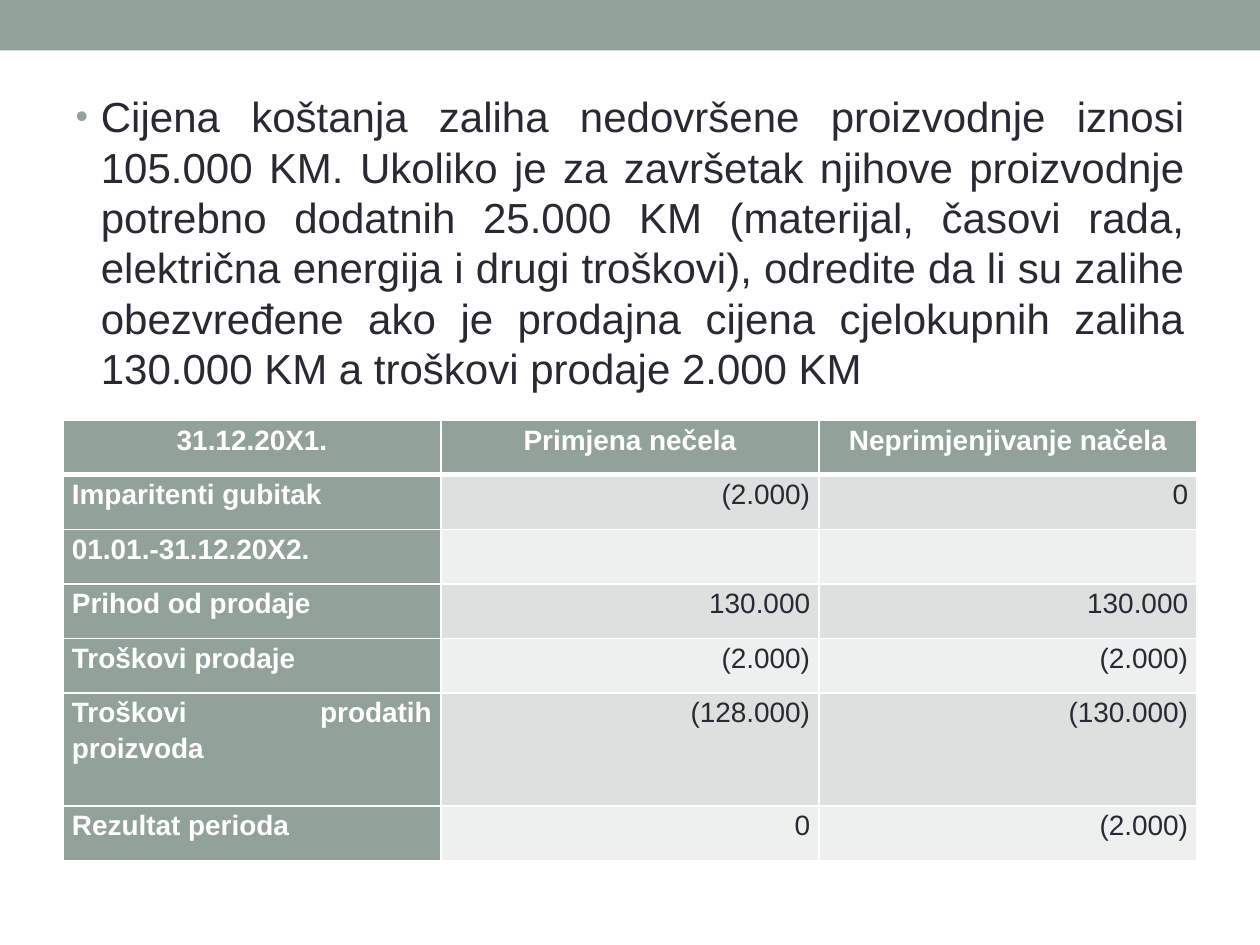
import pptx
import pptx.dml.color
import pptx.enum.shapes
import pptx.enum.text
import pptx.oxml
import pptx.util
from pptx.util import Cm, Pt

ALIGN = pptx.enum.text.PP_ALIGN
FONT = "Arial"
SAGE, INK, WHITE = "93A299", "292934", "FFFFFF"
BANDS = ("DCE0DE", "EEF0EF")

TASK = (
    "Cijena koštanja zaliha nedovršene proizvodnje iznosi 105.000 KM. "
    "Ukoliko je za završetak njihove proizvodnje potrebno dodatnih 25.000 KM "
    "(materijal, časovi rada, električna energija i drugi troškovi), odredite "
    "da li su zalihe obezvređene ako je prodajna cijena cjelokupnih zaliha "
    "130.000 KM a troškovi prodaje 2.000 KM"
)
ROWS = [
    ("31.12.20X1.", "Primjena nečela", "Neprimjenjivanje načela"),
    ("Imparitenti gubitak", "(2.000)", "0"),
    ("01.01.-31.12.20X2.", "", ""),
    ("Prihod od prodaje", "130.000", "130.000"),
    ("Troškovi prodaje", "(2.000)", "(2.000)"),
    ("Troškovi prodatih proizvoda", "(128.000)", "(130.000)"),
    ("Rezultat perioda", "0", "(2.000)"),
]
TALL_ROW = 5


def color(value):
    return pptx.dml.color.RGBColor.from_string(value)


def xml(tag, attributes="", content=""):
    namespace = "http://schemas.openxmlformats.org/drawingml/2006/main"
    return pptx.oxml.parse_xml(
        f'<a:{tag} xmlns:a="{namespace}" {attributes}>{content}</a:{tag}>')


def format_runs(paragraph, size, value, bold=False):
    for run in paragraph.runs:
        run.font.name = FONT
        run.font.size = Pt(size)
        run.font.bold = bold
        run.font.color.rgb = color(value)


def add_band(slide, width):
    band = slide.shapes.add_shape(
        pptx.enum.shapes.MSO_SHAPE.RECTANGLE, 0, 0, width, Cm(1.02))
    band.shadow.inherit = False
    band.fill.solid()
    band.fill.fore_color.rgb = color(SAGE)
    band.line.fill.background()


def fill_body(body):
    body.left, body.top, body.width, body.height = (
        Cm(1.27), Cm(1.7), Cm(22.86), Cm(6.55))
    body.text_frame.text = TASK
    paragraph = body.text_frame.paragraphs[0]
    paragraph.alignment = ALIGN.JUSTIFY
    format_runs(paragraph, 24, INK)
    # Hanging bullet
    properties = paragraph._p.get_or_add_pPr()
    properties.set("marL", str(Cm(0.51)))
    properties.set("indent", str(-Cm(0.51)))
    properties.append(xml("spcBef", content='<a:spcPct val="20000"/>'))
    properties.append(xml("buClr", content=f'<a:srgbClr val="{SAGE}"/>'))
    properties.append(xml("buSzPct", 'val="85000"'))
    properties.append(xml("buFont", f'typeface="{FONT}"'))
    properties.append(xml("buChar", 'char="•"'))


def set_borders(cell, is_header, below_header):
    properties = cell._tc.get_or_add_tcPr()
    widths = {"lnL": 1, "lnR": 1, "lnT": 3 if below_header else 1,
              "lnB": 3 if is_header else 1}
    # Borders come before the fill in the cell properties
    for index, (side, width) in enumerate(widths.items()):
        line = xml(side, f'w="{Pt(width)}"',
                   f'<a:solidFill><a:srgbClr val="{WHITE}"/></a:solidFill>')
        properties.insert(index, line)


def fill_cell(cell, text, row, column):
    is_header = row == 0
    is_label = is_header or column == 0
    cell.fill.solid()
    cell.fill.fore_color.rgb = color(SAGE if is_label else BANDS[(row - 1) % 2])
    set_borders(cell, is_header, row == 1)
    cell.margin_left = cell.margin_right = Cm(0.18)
    cell.margin_top = cell.margin_bottom = 0
    if not text:
        return
    cell.text_frame.text = text
    paragraph = cell.text_frame.paragraphs[0]
    paragraph.line_spacing = 1.15
    if is_header:
        paragraph.alignment = ALIGN.CENTER
    else:
        paragraph.alignment = ALIGN.JUSTIFY if is_label else ALIGN.RIGHT
    format_runs(paragraph, 16, WHITE if is_label else INK, is_label)


def add_results_table(slide):
    table = slide.shapes.add_table(
        len(ROWS), len(ROWS[0]), Cm(1.27), Cm(8.47), Cm(22.86), Cm(8.88)).table
    for row, texts in enumerate(ROWS):
        table.rows[row].height = Cm(2.28 if row == TALL_ROW else 1.1)
        for column, text in enumerate(texts):
            fill_cell(table.cell(row, column), text, row, column)


def main():
    presentation = pptx.Presentation()
    presentation.slide_width, presentation.slide_height = Cm(25.4), Cm(19.05)
    slide = presentation.slides.add_slide(presentation.slide_layouts[1])

    # The slide has no title
    title = slide.shapes.title._element
    title.getparent().remove(title)

    add_band(slide, presentation.slide_width)
    fill_body(slide.placeholders[1])
    add_results_table(slide)
    presentation.save("out.pptx")


if __name__ == "__main__":
    main()
